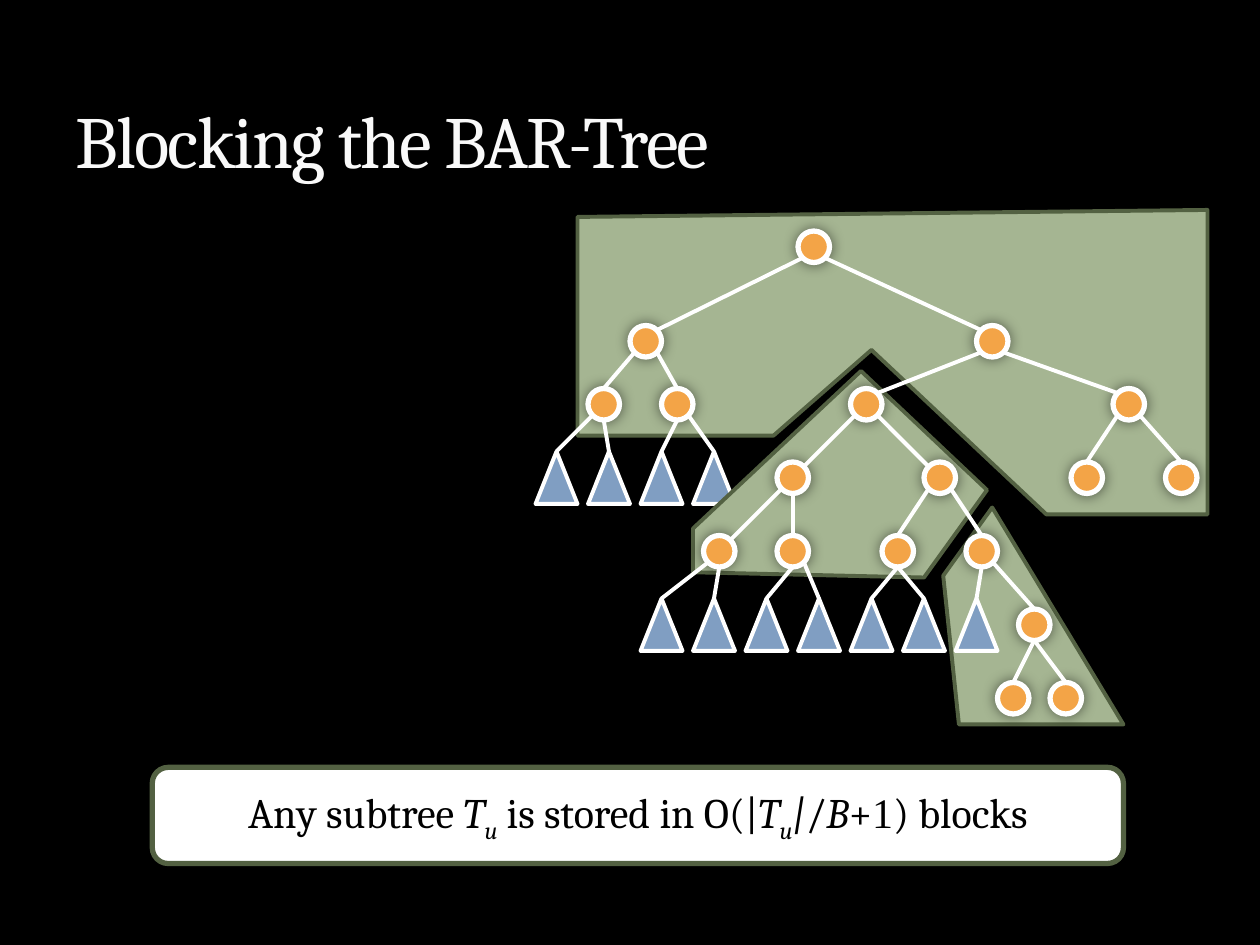
from dataclasses import dataclass

from lxml import etree
from pptx import Presentation
from pptx.dml.color import RGBColor
from pptx.enum.shapes import MSO_CONNECTOR, MSO_SHAPE
from pptx.enum.text import MSO_ANCHOR, PP_ALIGN
from pptx.oxml.ns import qn
from pptx.slide import Slide
from pptx.util import Pt

ELLIPSE = MSO_SHAPE.OVAL
TRIANGLE = MSO_SHAPE.ISOSCELES_TRIANGLE
ROUNDED = MSO_SHAPE.ROUNDED_RECTANGLE
STRAIGHT = MSO_CONNECTOR.STRAIGHT
MIDDLE, BOTTOM = MSO_ANCHOR.MIDDLE, MSO_ANCHOR.BOTTOM
LEFT, CENTER = PP_ALIGN.LEFT, PP_ALIGN.CENTER

COLORS = {
    "background": "000000", "title": "F9F9F9", "text": "000000",
    "block": "A5B592", "border": "536142", "node": "F3A447",
    "subtree": "809EC2", "white": "FFFFFF", "shadow": "000000",
}
NODE = 18
SUBTREE_WIDTH, SUBTREE_HEIGHT, SUBTREE_STEP = 24, 30, 30

# Tree nodes by name: left and top
NODES = {
    "root": (456, 132),
    "l": (360, 186), "r": (558, 186),
    "ll": (336, 222), "lr": (378, 222), "rl": (486, 222), "rr": (636, 222),
    "rll": (444, 264), "rlr": (528, 264), "rrl": (612, 264), "rrr": (666, 264),
    "rlll": (402, 306), "rllr": (444, 306), "rlrl": (504, 306), "rlrr": (552, 306),
    "rlrrr": (582, 348),
    "rlrrrl": (570, 390), "rlrrrr": (600, 390),
}
# Parent, its exit point, child, its entry point (compass directions)
EDGES = [
    ("root", "SW", "l", "NE"), ("root", "SE", "r", "NW"),
    ("l", "SW", "ll", "N"), ("l", "SE", "lr", "N"),
    ("r", "SW", "rl", "NE"), ("r", "SE", "rr", "NW"),
    ("rl", "SW", "rll", "NE"), ("rl", "SE", "rlr", "NW"),
    ("rr", "SW", "rrl", "N"), ("rr", "SE", "rrr", "N"),
    ("rll", "SW", "rlll", "NE"), ("rll", "S", "rllr", "N"),
    ("rlr", "SW", "rlrl", "N"), ("rlr", "SE", "rlrr", "N"),
    ("rlrr", "SE", "rlrrr", "N"),
    ("rlrrr", "S", "rlrrrl", "N"), ("rlrrr", "S", "rlrrrr", "N"),
]
# Each row of collapsed subtrees: left, top, and the parent end of every edge
SUBTREE_ROWS = [
    (306, 258, [("ll", "SW"), ("ll", "S"), ("lr", "S"), ("lr", "SE")]),
    (366, 342, [("rlll", "SW"), ("rlll", "S"), ("rllr", "S"), ("rllr", "SE"),
                ("rlrl", "S"), ("rlrl", "S"), ("rlrr", "S")]),
]
ROOT_BLOCK = [(330, 124.5), (330, 249), (441.5, 249), (498, 200),
              (597.5, 294), (690, 294), (690, 120)]
MIDDLE_BLOCK = [(396, 301.5), (396, 327), (528.5, 330), (564, 279.5), (492.5, 212.5)]
LOWER_BLOCK = [(539, 329), (567, 290), (642, 414), (547.5, 414)]


@dataclass
class TreeSlide:
    slide: Slide
    font: str = "Cambria"
    line_width: float = 2.25

    def color(self, name):
        return RGBColor.from_string(COLORS[name])

    def background(self, name):
        fill = self.slide.background.fill
        fill.solid()
        fill.fore_color.rgb = self.color(name)

    def paint(self, shape, fill, line, width):
        shape.shadow.inherit = False
        shape.fill.solid()
        shape.fill.fore_color.rgb = self.color(fill)
        shape.line.color.rgb = self.color(line)
        shape.line.width = Pt(width)

    def shape(self, kind, box, fill, line="white", width=None):
        shape = self.slide.shapes.add_shape(kind, *map(Pt, box))
        self.paint(shape, fill, line, width or self.line_width)
        return shape

    def block(self, points):
        builder = self.slide.shapes.build_freeform(*points[0], scale=Pt(1))
        builder.add_line_segments(points[1:], close=True)
        self.paint(builder.convert_to_shape(), "block", "border", self.line_width)

    def node(self, left, top):
        shape = self.shape(ELLIPSE, (left, top, NODE, NODE), "node", width=3)
        effects = shape._element.spPr.find(qn("a:effectLst"))
        glow = etree.SubElement(effects, qn("a:outerShdw"), blurRad=str(Pt(7.5)), dist="0",
                                algn="ctr", rotWithShape="0")
        color = etree.SubElement(glow, qn("a:srgbClr"), val=COLORS["shadow"])
        etree.SubElement(color, qn("a:alpha"), val="50000")

    def subtree(self, left, top):
        self.shape(TRIANGLE, (left, top, SUBTREE_WIDTH, SUBTREE_HEIGHT), "subtree")

    def edge(self, start, end):
        line = self.slide.shapes.add_connector(STRAIGHT, *map(Pt, (*start, *end)))
        line.line.color.rgb = self.color("white")
        line.line.width = Pt(self.line_width)
        etree.SubElement(line._element.spPr, qn("a:effectLst"))

    def add_text(self, shape, runs, size, color, anchor, alignment, spacing=0):
        """Fill a shape with one paragraph of (text, style) runs.

        Style letters: i italic, s subscript, t Times New Roman.
        """
        frame = shape.text_frame
        frame.word_wrap = True
        frame.vertical_anchor = anchor
        paragraph = frame.paragraphs[0]
        paragraph.alignment = alignment
        for text, style in runs:
            run = paragraph.add_run()
            run.text = text
            run.font.name = "Times New Roman" if "t" in style else self.font
            run.font.size = Pt(size)
            run.font.italic = "i" in style
            run.font.color.rgb = self.color(color)
            properties = run._r.get_or_add_rPr()
            if "s" in style:
                properties.set("baseline", "-25000")
            if spacing:
                properties.set("spc", str(spacing * 100))

    def title(self, text):
        box = self.slide.shapes.add_textbox(*map(Pt, (36, 12, 648, 96)))
        self.add_text(box, [(text, "")], 42, "title", BOTTOM, LEFT, spacing=-1)

    def statement(self, runs):
        shape = self.shape(ROUNDED, (87, 438.5, 555, 55), "white", "border", 3)
        self.add_text(shape, runs, 24, "text", MIDDLE, CENTER)


def rim(name, direction):
    """Point on the outline of a node in a compass direction."""
    left, top = NODES[name]
    radius = NODE / 2
    reach = radius if len(direction) == 1 else radius * 0.5 ** 0.5
    across = ("E" in direction) - ("W" in direction)
    down = ("S" in direction) - ("N" in direction)
    return left + radius + across * reach, top + radius + down * reach


def main():
    presentation = Presentation()
    presentation.slide_width, presentation.slide_height = Pt(720), Pt(540)
    page = TreeSlide(presentation.slides.add_slide(presentation.slide_layouts[6]))
    page.background("background")
    page.title("Blocking the BAR-Tree")

    subtrees = [(left + i * SUBTREE_STEP, top, parent)
                for left, top, parents in SUBTREE_ROWS
                for i, parent in enumerate(parents)]
    # The last subtree of the upper row lies partly under the middle block
    covered = subtrees.pop(len(SUBTREE_ROWS[0][2]) - 1)

    page.block(LOWER_BLOCK)
    page.subtree(*covered[:2])
    page.block(MIDDLE_BLOCK)
    page.block(ROOT_BLOCK)
    for position in NODES.values():
        page.node(*position)
    for parent, leaving, child, entering in EDGES:
        page.edge(rim(parent, leaving), rim(child, entering))
    for left, top, _ in subtrees:
        page.subtree(left, top)
    for left, top, parent in [*subtrees, covered]:
        page.edge(rim(*parent), (left + SUBTREE_WIDTH / 2, top))

    page.statement([
        ("Any subtree ", ""), ("T", "i"), ("u", "is"), (" is stored in O(|", ""),
        ("T", "i"), ("u", "is"), ("|", "i"), ("/", ""), ("B", "i"), ("+", ""),
        ("1", "t"), (") blocks", ""),
    ])
    presentation.save("out.pptx")


if __name__ == "__main__":
    main()
